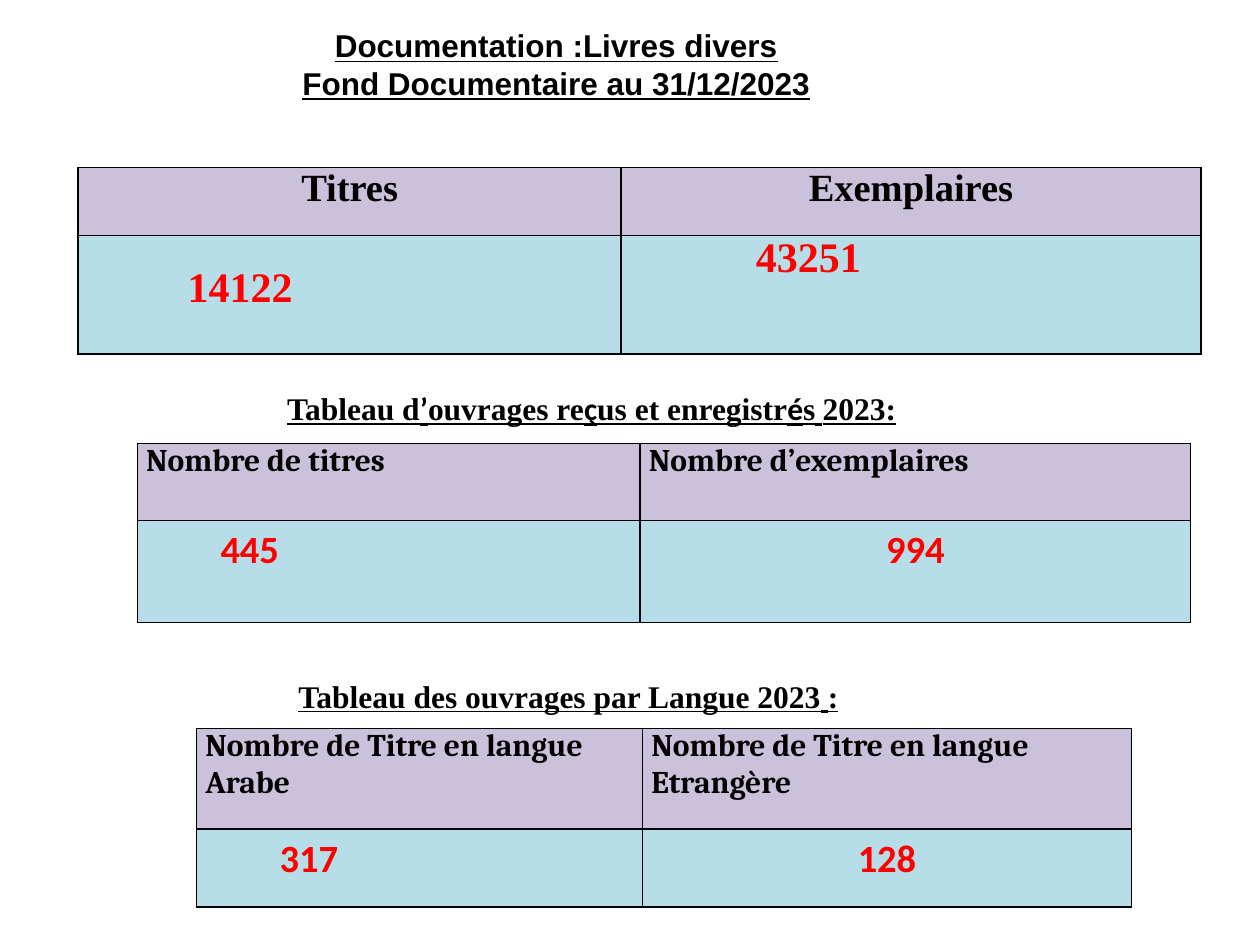
from lxml.etree import SubElement
from pptx import Presentation
from pptx.dml.color import RGBColor
from pptx.enum.text import MSO_ANCHOR, PP_ALIGN
from pptx.oxml import parse_xml
from pptx.oxml.ns import nsdecls
from pptx.util import Inches, Pt

COLORS = {"text": "000000", "figure": "FF0000", "header": "CCC1DA",
          "body": "B7DEE8", "border": "000000"}
SERIF = "Times New Roman"

# Each heading: left, top, width, height, alignment, (text, font) pieces
HEADINGS = [
    (0, 0.2, 8.83, 0.62, PP_ALIGN.CENTER,
     [("Documentation\u00a0:Livres divers\vFond Documentaire au 31/12/2023", "Arial")]),
    (2.18, 3.04, 5.32, 0.4, PP_ALIGN.LEFT,
     [("Tableau d", SERIF), ("’", "Calibri"), ("ouvrages re", SERIF), ("ç", "Calibri"),
      ("us et enregistr", SERIF), ("é", "Calibri"), ("s", SERIF),
      ("\u00a0", "Calibri"), ("2023:", SERIF)]),
    (2.27, 5.32, 5, 0.4, PP_ALIGN.LEFT,
     [("Tableau des ouvrages par Langue 2023", SERIF), ("\u00a0", "Calibri"), (":", SERIF)]),
]

# Figures: (text, indent or None when centred, top margin, line spacing)
TABLES = [
    {"at": (0.62, 1.33), "columns": (4.31, 4.6), "rows": (0.54, 0.94),
     "headers": ("Titres", "Exemplaires"), "header_align": PP_ALIGN.CENTER,
     "header_font": (SERIF, 22), "figure_font": (SERIF, 24),
     "figures": (("14122", 0.8, 0.18, 1.15), ("43251", 1.0, 0, 1))},
    {"at": (1.09, 3.52), "columns": (3.99, 4.37), "rows": (0.61, 0.81),
     "headers": ("Nombre de titres", "Nombre d’exemplaires"), "header_align": PP_ALIGN.LEFT,
     "header_font": ("Cambria", 18), "figure_font": ("Calibri", 22),
     "figures": (("445", 0.59, 0, 1.15), ("994", None, 0, 1.15))},
    {"at": (1.56, 5.78), "columns": (3.54, 3.88), "rows": (0.8, 0.62),
     "headers": ("Nombre de Titre en langue Arabe", "Nombre de Titre en langue Etrangère"),
     "header_align": PP_ALIGN.LEFT,
     "header_font": ("Cambria", 18), "figure_font": ("Calibri", 22),
     "figures": (("317", 0.59, 0, 1.15), ("128", None, 0, 1.15))},
]


def style_font(font, name, size, color):
    font.name, font.size, font.bold = name, Pt(size), True
    font.color.rgb = RGBColor.from_string(COLORS[color])


def add_heading(slide, left, top, width, height, align, pieces):
    frame = slide.shapes.add_textbox(*map(Inches, (left, top, width, height))).text_frame
    frame.word_wrap = True
    frame.vertical_anchor = MSO_ANCHOR.MIDDLE
    paragraph = frame.paragraphs[0]
    paragraph.text = "".join(text for text, _ in pieces) if len(pieces) == 1 else ""
    paragraph.alignment = align
    if len(pieces) > 1:
        for text, _ in pieces:
            paragraph.add_run().text = text
    fonts = [font for _, font in pieces]
    for index, run in enumerate(paragraph.runs):
        style_font(run.font, fonts[min(index, len(fonts) - 1)], 18, "text")
        run.font.underline = True


def add_borders(cell):
    properties = cell._tc.get_or_add_tcPr()
    for index, side in enumerate("LRTB"):
        line = parse_xml(f'<a:ln{side} {nsdecls("a")} w="{Pt(1)}"><a:solidFill>'
                         f'<a:srgbClr val="{COLORS["border"]}"/></a:solidFill></a:ln{side}>')
        properties.insert(index, line)


def fill_cell(cell, text, fill, font, color, align, top=0):
    cell.margin_left = cell.margin_right = Inches(0.07)
    cell.margin_top, cell.margin_bottom = Inches(top), 0
    cell.fill.solid()
    cell.fill.fore_color.rgb = RGBColor.from_string(COLORS[fill])
    add_borders(cell)
    paragraph = cell.text_frame.paragraphs[0]
    paragraph.text = text
    paragraph.alignment = align
    style_font(paragraph.runs[0].font, *font, color)
    return paragraph


def add_count_table(slide, data):
    columns, rows = data["columns"], data["rows"]
    table = slide.shapes.add_table(
        len(rows), len(columns),
        *map(Inches, (*data["at"], sum(columns), sum(rows)))).table
    for column, width in zip(table.columns, columns):
        column.width = Inches(width)
    for row, height in zip(table.rows, rows):
        row.height = Inches(height)
    for index, header in enumerate(data["headers"]):
        fill_cell(table.cell(0, index), header, "header", data["header_font"],
                  "text", data["header_align"])
    for index, (figure, indent, top, spacing) in enumerate(data["figures"]):
        align = PP_ALIGN.CENTER if indent is None else PP_ALIGN.LEFT
        paragraph = fill_cell(table.cell(1, index), figure, "body", data["figure_font"],
                              "figure", align, top)
        paragraph.line_spacing = spacing
        if indent:
            paragraph._p.get_or_add_pPr().set("marL", str(Inches(indent)))


def main():
    presentation = Presentation()
    presentation.slide_width, presentation.slide_height = Inches(10), Inches(7.5)
    slide = presentation.slides.add_slide(presentation.slide_layouts[6])
    for heading in HEADINGS:
        add_heading(slide, *heading)
    for data in TABLES:
        add_count_table(slide, data)
    presentation.save("out.pptx")


if __name__ == "__main__":
    main()
